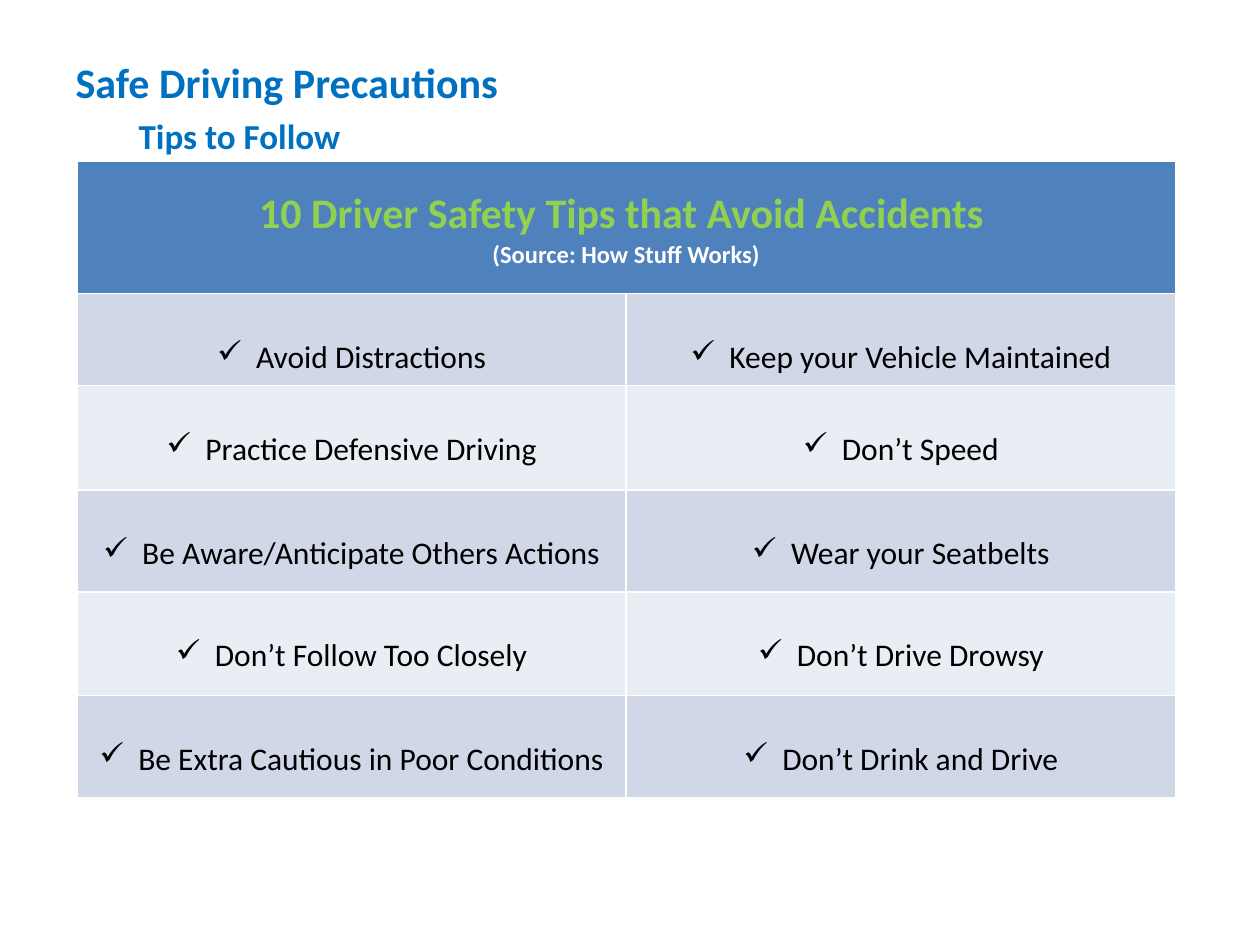
"""Build the safe driving precautions slide with its table of ten tips."""
from lxml import etree
from pptx import Presentation
from pptx.dml.color import RGBColor
from pptx.enum.text import MSO_ANCHOR, MSO_AUTO_SIZE, PP_ALIGN
from pptx.oxml.ns import qn
from pptx.util import Inches, Pt

LEFT, CENTER = PP_ALIGN.LEFT, PP_ALIGN.CENTER
MIDDLE = MSO_ANCHOR.MIDDLE
NO_AUTOFIT = MSO_AUTO_SIZE.NONE

TITLE_BLUE = RGBColor(0x00, 0x70, 0xC0)
HEADER_BLUE = RGBColor(0x4F, 0x81, 0xBD)
HEADER_GREEN = RGBColor(0x92, 0xD0, 0x50)
WHITE = RGBColor(0xFF, 0xFF, 0xFF)
BLACK = RGBColor(0x00, 0x00, 0x00)
BANDS = [RGBColor(0xD0, 0xD8, 0xE8), RGBColor(0xE9, 0xED, 0xF4)]

TIPS = [
    ("Avoid Distractions", "Keep your Vehicle Maintained"),
    ("Practice Defensive Driving", "Don’t Speed"),
    ("Be Aware/Anticipate Others Actions", "Wear your Seatbelts"),
    ("Don’t Follow Too Closely", "Don’t Drive Drowsy"),
    ("Be Extra Cautious in Poor Conditions", "Don’t Drink and Drive"),
]
ROW_HEIGHTS = [1.05, 0.73, 0.83, 0.81, 0.82, 0.81]
COLUMN_WIDTH = 4.36


def style_runs(paragraph, size, color, bold):
    for run in paragraph.runs:
        run.font.name = "Calibri"
        run.font.size = Pt(size)
        run.font.color.rgb = color
        run.font.bold = bold


prs = Presentation()
prs.slide_width, prs.slide_height = Inches(10), Inches(7.5)
slide = prs.slides.add_slide(prs.slide_layouts[5])

title = slide.shapes.title
title.left, title.top = Inches(0.5), Inches(0.5)
title.width, title.height = Inches(9), Inches(0.7)
title.text_frame.auto_size = NO_AUTOFIT
title.text_frame.vertical_anchor = MIDDLE
heading = title.text_frame.paragraphs[0]
heading.text = "Safe Driving Precautions\v\t"
heading.alignment = LEFT
tab_stops = etree.SubElement(heading._p.get_or_add_pPr(), qn("a:tabLst"))
etree.SubElement(tab_stops, qn("a:tab"), pos=str(Inches(0.5)), algn="l")
subheading = heading.add_run()
subheading.text = "Tips to Follow"
style_runs(heading, 24, TITLE_BLUE, True)
subheading.font.size = Pt(20)

tips_table = slide.shapes.add_table(
    len(ROW_HEIGHTS), 2, Inches(0.61), Inches(1.28),
    Inches(2 * COLUMN_WIDTH), Inches(sum(ROW_HEIGHTS))).table
for column in tips_table.columns:
    column.width = Inches(COLUMN_WIDTH)
for row, height in zip(tips_table.rows, ROW_HEIGHTS):
    row.height = Inches(height)

header = tips_table.cell(0, 0)
header.merge(tips_table.cell(0, 1))
header.fill.solid()
header.fill.fore_color.rgb = HEADER_BLUE
header.margin_top = Inches(0.22)
header.text_frame.text = "10 Driver Safety Tips that Avoid Accidents \n(Source: How Stuff Works)"
for line, size, color in zip(header.text_frame.paragraphs, (24, 14), (HEADER_GREEN, WHITE)):
    line.alignment = CENTER
    style_runs(line, size, color, True)

for row_index, tip_pair in enumerate(TIPS, start=1):
    for column_index, tip in enumerate(tip_pair):
        cell = tips_table.cell(row_index, column_index)
        cell.fill.solid()
        cell.fill.fore_color.rgb = BANDS[(row_index - 1) % 2]
        paragraph = cell.text_frame.paragraphs[0]
        paragraph.text = tip
        paragraph.alignment = CENTER
        paragraph.line_spacing = 2.0
        properties = paragraph._p.get_or_add_pPr()
        properties.set("marL", str(Inches(0.31)))
        properties.set("indent", str(Inches(-0.31)))
        etree.SubElement(properties, qn("a:buChar"), char="✓")
        style_runs(paragraph, 18, BLACK, False)

prs.save("out.pptx")
